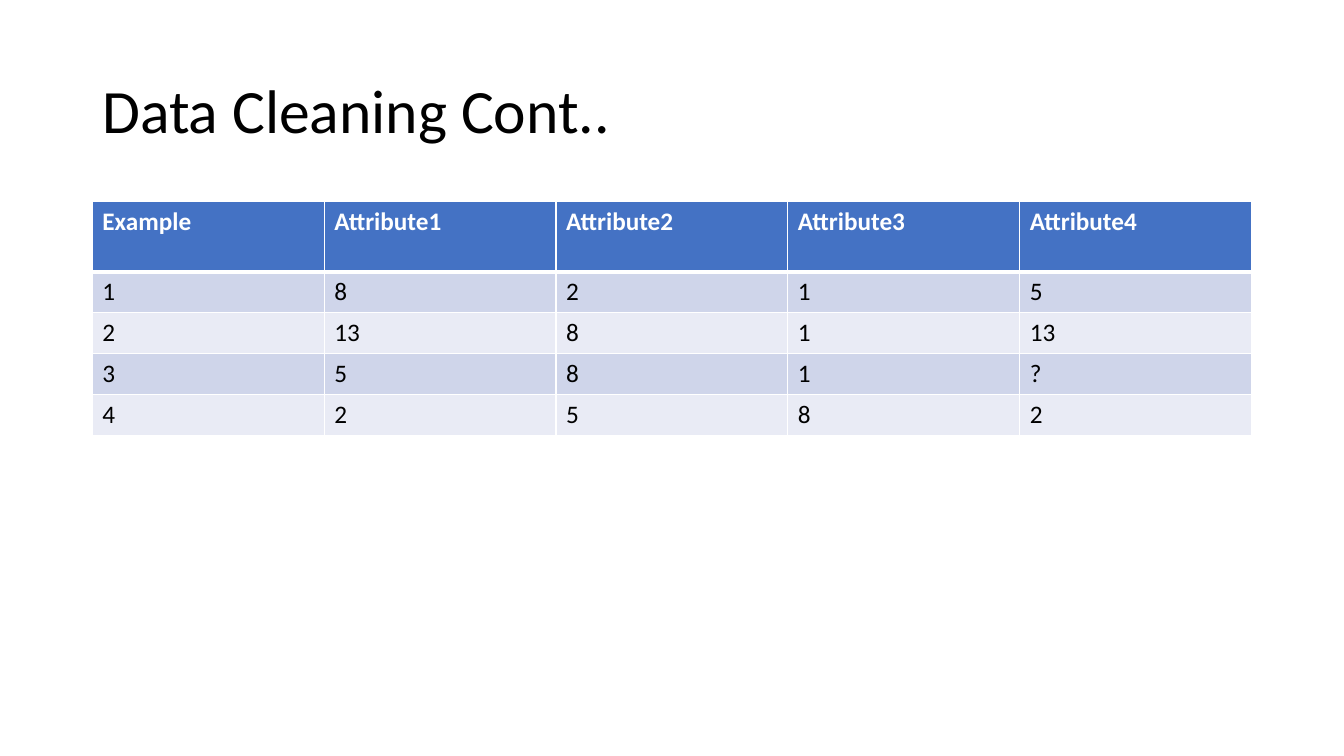
from lxml.etree import SubElement
from pptx import Presentation
from pptx.dml.color import RGBColor
from pptx.enum.text import MSO_ANCHOR
from pptx.oxml.ns import qn
from pptx.util import Pt

TITLE = "Data Cleaning Cont.."
ROWS = [
    ("Example", "Attribute1", "Attribute2", "Attribute3", "Attribute4"),
    ("1", "8", "2", "1", "5"),
    ("2", "13", "8", "1", "13"),
    ("3", "5", "8", "1", "?"),
    ("4", "2", "5", "8", "2"),
]
COLORS = {"head": "4472C4", "odd": "CFD5EA", "even": "E9EBF5",
          "white": "FFFFFF", "black": "000000"}
FONT = "Calibri"
LEFT, WIDTH = 66, 828
TITLE_TOP, TITLE_HIGH = 28.75, 104.4
TABLE_TOP, HEAD_HIGH, ROW_HIGH = 144, 50.2, 29.2
THIN, THICK = 1, 3


def style(para, size, color, bold=False):
    font = para.font
    font.name, font.size, font.bold = FONT, Pt(size), bold
    font.color.rgb = RGBColor.from_string(COLORS[color])


def add_title(slide):
    box = slide.shapes.add_textbox(Pt(LEFT), Pt(TITLE_TOP), Pt(WIDTH), Pt(TITLE_HIGH))
    frame = box.text_frame
    frame.word_wrap = True
    frame.vertical_anchor = MSO_ANCHOR.MIDDLE
    para = frame.paragraphs[0]
    para.text = TITLE
    para.line_spacing = 0.9
    style(para, 44, "black")


def add_borders(cell, row):
    """Draw white cell edges, with a thick one below the header row."""
    widths = {"a:lnL": THIN, "a:lnR": THIN,
              "a:lnT": THICK if row == 1 else THIN,
              "a:lnB": THICK if row == 0 else THIN}
    props = cell._tc.get_or_add_tcPr()
    for tag, width in widths.items():
        line = SubElement(props, qn(tag), w=str(Pt(width)))
        fill = SubElement(line, qn("a:solidFill"))
        SubElement(fill, qn("a:srgbClr"), val=COLORS["white"])


def add_grid(slide):
    heights = [HEAD_HIGH] + [ROW_HIGH] * (len(ROWS) - 1)
    count = len(ROWS[0])
    table = slide.shapes.add_table(len(ROWS), count, Pt(LEFT), Pt(TABLE_TOP),
                                   Pt(WIDTH), Pt(sum(heights))).table
    for col in table.columns:
        col.width = Pt(WIDTH / count)
    for r, (values, height) in enumerate(zip(ROWS, heights)):
        table.rows[r].height = Pt(height)
        shade = "head" if r == 0 else "odd" if r % 2 else "even"
        for c, value in enumerate(values):
            cell = table.cell(r, c)
            cell.text = value
            style(cell.text_frame.paragraphs[0], 18,
                  "white" if r == 0 else "black", r == 0)
            add_borders(cell, r)
            cell.fill.solid()
            cell.fill.fore_color.rgb = RGBColor.from_string(COLORS[shade])


def main():
    deck = Presentation()
    deck.slide_width, deck.slide_height = Pt(960), Pt(540)
    slide = deck.slides.add_slide(deck.slide_layouts[6])
    add_title(slide)
    add_grid(slide)
    deck.save("out.pptx")


if __name__ == "__main__":
    main()
